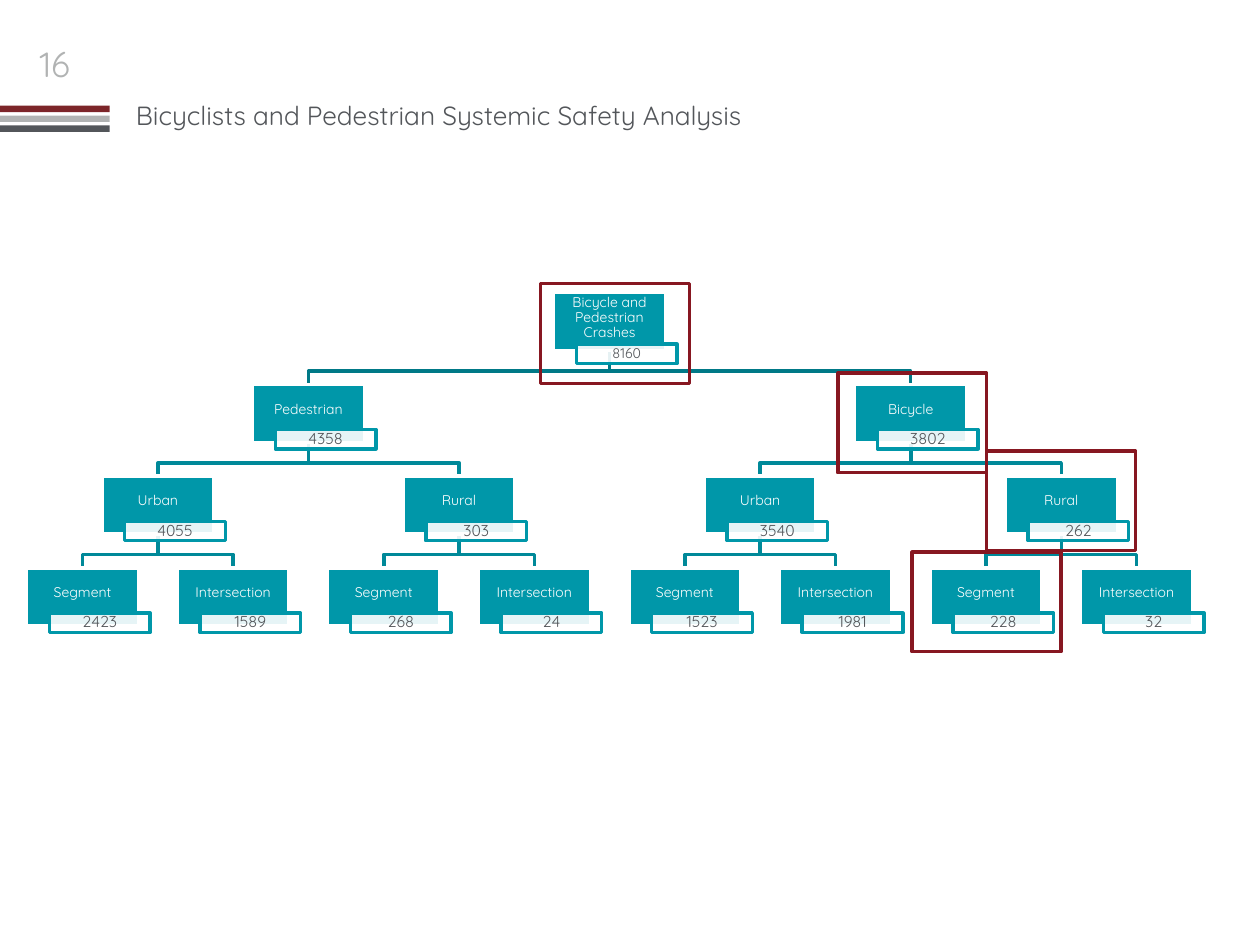
from dataclasses import dataclass
from typing import Optional

from lxml.etree import SubElement
from pptx import Presentation
from pptx.dml.color import RGBColor
from pptx.enum.text import MSO_ANCHOR, PP_ALIGN
from pptx.oxml.ns import qn
from pptx.util import Cm, Pt

FONT = "Quicksand"
HUES = {
    "teal": "0097A9", "link": "008999", "trunk": "007987", "white": "FFFFFF",
    "text": "53565A", "gray": "B1B3B3", "red": "7C2529", "frame": "871721",
}

# All lengths below are centimetres.
ROOT_X, ROOT_Y = 12.29, 5.9
SPREAD, STEP = 6.07, 1.85
BOX_W, BOX_H = 2.26, 1.17
TAG_W, TAG_H = 2.03, 0.39
STUB, DROP = 0.41, 0.69


@dataclass
class Rect:
    left: float
    top: float
    width: float
    height: float


@dataclass
class Node:
    label: str
    count: str
    kids: tuple["Node", ...] = ()
    drop: float = 0.91  # from the top of the box to its count tag
    size: float = 9


def hue(name: str) -> RGBColor:
    return RGBColor.from_string(HUES[name])


def area(rect: Rect) -> tuple:
    return Cm(rect.left), Cm(rect.top), Cm(rect.width), Cm(rect.height)


def add_rect(slide, rect: Rect, fill: Optional[str], line: Optional[str] = None):
    shape = slide.shapes.add_shape(1, *area(rect))
    shape.shadow.inherit = False
    if fill:
        shape.fill.solid()
        shape.fill.fore_color.rgb = hue(fill)
    else:
        shape.fill.background()
    if line:
        shape.line.color.rgb = hue(line)
        shape.line.width = Pt(2)
    else:
        shape.line.fill.background()
    return shape


def write(shape, text: str, size: float, color: str, align=PP_ALIGN.CENTER) -> None:
    frame = shape.text_frame
    frame.word_wrap = True
    para = frame.paragraphs[0]
    para.alignment = align
    run = para.add_run()
    run.text = text
    run.font.name = FONT
    run.font.size = Pt(size)
    run.font.color.rgb = hue(color)


def inset(shape, side: float, base: float) -> None:
    """Centre the text vertically, with tight margins and line spacing."""
    frame = shape.text_frame
    frame.vertical_anchor = MSO_ANCHOR.MIDDLE
    frame.margin_left = frame.margin_right = Cm(side)
    frame.margin_top, frame.margin_bottom = Cm(0.03), Cm(base)
    frame.paragraphs[0].line_spacing = 0.9


def place(node: Node, x: float, level: int = 0) -> list:
    """List a node and all below it as (node, centre, level, parent centre)."""
    spots = [(node, x, level, None)]
    gap = SPREAD / 2 ** level
    for kid, side in zip(node.kids, (-1, 1)):
        first, *rest = place(kid, x + side * gap, level + 1)
        spots += [(*first[:3], x), *rest]
    return spots


def add_link(slide, start: float, end: float, level: int) -> None:
    top = ROOT_Y + (level - 1) * STEP + BOX_H
    bend, foot = Cm(top + STUB), Cm(top + DROP)
    path = slide.shapes.build_freeform(Cm(start), Cm(top))
    path.add_line_segments(
        [(Cm(start), bend), (Cm(end), bend), (Cm(end), foot)], close=False)
    link = path.convert_to_shape()
    link.shadow.inherit = False
    link.fill.background()
    link.line.color.rgb = hue("trunk" if level == 1 else "link")
    link.line.width = Pt(2)


def add_node(slide, node: Node, x: float, level: int) -> None:
    left, top = x - BOX_W / 2, ROOT_Y + level * STEP
    box = add_rect(slide, Rect(left, top, BOX_W, BOX_H), "teal", "white")
    write(box, node.label, 8, "white")
    inset(box, 0.03, 0.18)
    tag = add_rect(slide, Rect(left + 0.46, top + node.drop, TAG_W, TAG_H),
                   "white", "teal")
    shade = tag.fill._xPr.find(qn("a:solidFill"))[0]
    SubElement(shade, qn("a:alpha")).set("val", "90000")
    write(tag, node.count, node.size, "text")
    inset(tag, 0.06, 0.03)


def pair(part: str, cross: str) -> tuple[Node, Node]:
    return Node("Segment", part), Node("Intersection", cross)


TREE = Node("Bicycle and Pedestrian Crashes", "8160", (
    Node("Pedestrian", "4358", (
        Node("Urban", "4055", pair("2423", "1589")),
        Node("Rural", "303", pair("268", "24")))),
    Node("Bicycle", "3802", (
        Node("Urban", "3540", pair("1523", "1981")),
        Node("Rural", "262", pair("228", "32")))),
), drop=1.04, size=8)

FRAMES = [(10.9, 5.72), (16.89, 7.52), (19.89, 9.09), (18.39, 11.13)]


def main() -> None:
    deck = Presentation()
    deck.slide_width, deck.slide_height = Cm(25.4), Cm(19.05)
    slide = deck.slides.add_slide(deck.slide_layouts[6])

    title = slide.shapes.add_textbox(*area(Rect(2.49, 1.88, 14.6, 0.89)))
    write(title, "Bicyclists and Pedestrian Systemic Safety Analysis", 15, "text",
          PP_ALIGN.LEFT)
    for row, color in enumerate(("red", "gray", "text")):
        add_rect(slide, Rect(0, 2.13 + row * 0.2, 2.21, 0.13), color)
    page = slide.shapes.add_textbox(*area(Rect(0, 0.74, 2.21, 1.12)))
    write(page, "16", 20, "gray")

    spots = place(TREE, ROOT_X)
    for _, x, level, source in reversed(spots):
        if source is not None:
            add_link(slide, source, x, level)
    for node, x, level, _ in spots:
        add_node(slide, node, x, level)
    for left, top in FRAMES:
        add_rect(slide, Rect(left, top, 3, 2.01), None, "frame")

    deck.save("out.pptx")


if __name__ == "__main__":
    main()
